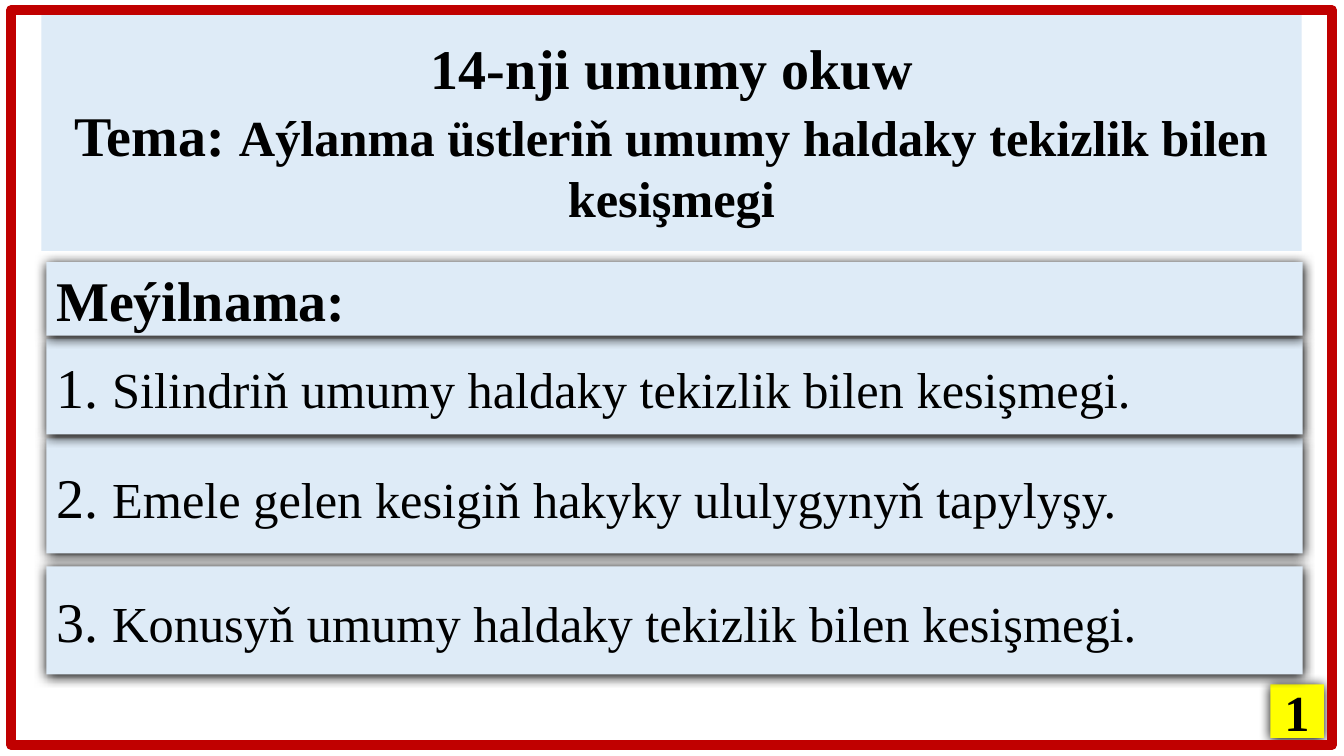
from lxml import etree
from pptx import Presentation
from pptx.dml.color import RGBColor as RGB
from pptx.enum.shapes import MSO_SHAPE as Form
from pptx.enum.text import MSO_ANCHOR as Anchor, MSO_AUTO_SIZE as Fit, PP_ALIGN as Align
from pptx.oxml import parse_xml
from pptx.oxml.ns import nsdecls
from pptx.util import Inches, Pt

HUES = {"ink": "000000", "pale": "DEEBF7", "mark": "FFFF00", "edge": "C00000"}
FACE = "Times New Roman"
BIG, MID = 40, 36

HEAD = [
    [("14-nji umumy okuw", BIG)],
    [("Tema: ", BIG), ("Aýlanma üstleriň umumy haldaky tekizlik bilen kesişmegi", MID)],
]
# Top, height, runs, bold
BARS = [
    (5.62, 1.07, [("3. ", BIG), ("Konusyň umumy haldaky tekizlik bilen kesişmegi.", MID)], False),
    (4.35, 1.14, [("2. ", BIG), ("Emele gelen kesigiň hakyky ululygynyň tapylyşy.", MID)], False),
    (3.36, 0.95, [("1. ", BIG), ("Silindriň umumy haldaky tekizlik bilen kesişmegi.", MID)], False),
    (2.6, 0.73, [("Meýilnama:", BIG)], True),
]


def color(name):
    return RGB.from_string(HUES[name])


def paint(shape, hue):
    shape.fill.solid()
    shape.fill.fore_color.rgb = color(hue)
    shape.line.fill.background()


def place(shape, left, top, width, height):
    shape.left, shape.top = Inches(left), Inches(top)
    shape.width, shape.height = Inches(width), Inches(height)


def write(shape, lines, align, bold):
    """Fill a shape with paragraphs given as lists of (text, size) runs."""
    frame = shape.text_frame
    frame.word_wrap = True
    frame.auto_size = Fit.NONE
    frame.vertical_anchor = Anchor.MIDDLE
    for i, line in enumerate(lines):
        para = frame.add_paragraph() if i else frame.paragraphs[0]
        para.alignment = align
        for text, size in line:
            run = para.add_run()
            run.text = text
            font = run.font
            font.name, font.size, font.bold = FACE, Pt(size), bold
            font.color.rgb = color("ink")


def shade(shape):
    """Add a soft shadow just below the shape."""
    shape.shadow.inherit = False
    effects = shape.fill._xPr.find("{*}effectLst")
    effects.append(parse_xml(
        f'<a:outerShdw {nsdecls("a")} blurRad="{Pt(8.5)}" dist="{Pt(1)}" '
        f'dir="5400000" algn="t" rotWithShape="0">'
        f'<a:srgbClr val="{HUES["ink"]}"/></a:outerShdw>'))


def add_card(slide, form, box, hue, line, align, bold):
    card = slide.shapes.add_shape(form, *map(Inches, box))
    paint(card, hue)
    shade(card)
    write(card, [line], align, bold)
    return card


def add_title(slide):
    title = slide.shapes.title
    place(title, 0.41, 0.1, 12.5, 2.39)
    paint(title, "pale")
    write(title, HEAD, Align.CENTER, True)


def add_frame(slide):
    frame = slide.shapes.add_shape(Form.RECTANGLE, *map(Inches, (0.11, 0.1, 13.1, 7.29)))
    frame.shadow.inherit = False
    frame.fill.background()
    frame.line.color.rgb = color("edge")
    frame.line.width = Pt(7)


def main():
    deck = Presentation()
    deck.slide_width, deck.slide_height = Inches(13.33), Inches(7.5)
    slide = deck.slides.add_slide(deck.slide_layouts[5])
    add_title(slide)
    add_card(slide, Form.RECTANGLE, (12.6, 6.79, 0.53, 0.53), "mark",
             [("1", MID)], Align.CENTER, True)
    for top, height, line, bold in BARS[1:] + BARS[:1]:
        bar = add_card(slide, Form.PENTAGON, (0.46, top, 12.46, height), "pale",
                       line, Align.LEFT, bold)
        bar.adjustments[0] = 0
    add_frame(slide)
    deck.save("out.pptx")


if __name__ == "__main__":
    main()
